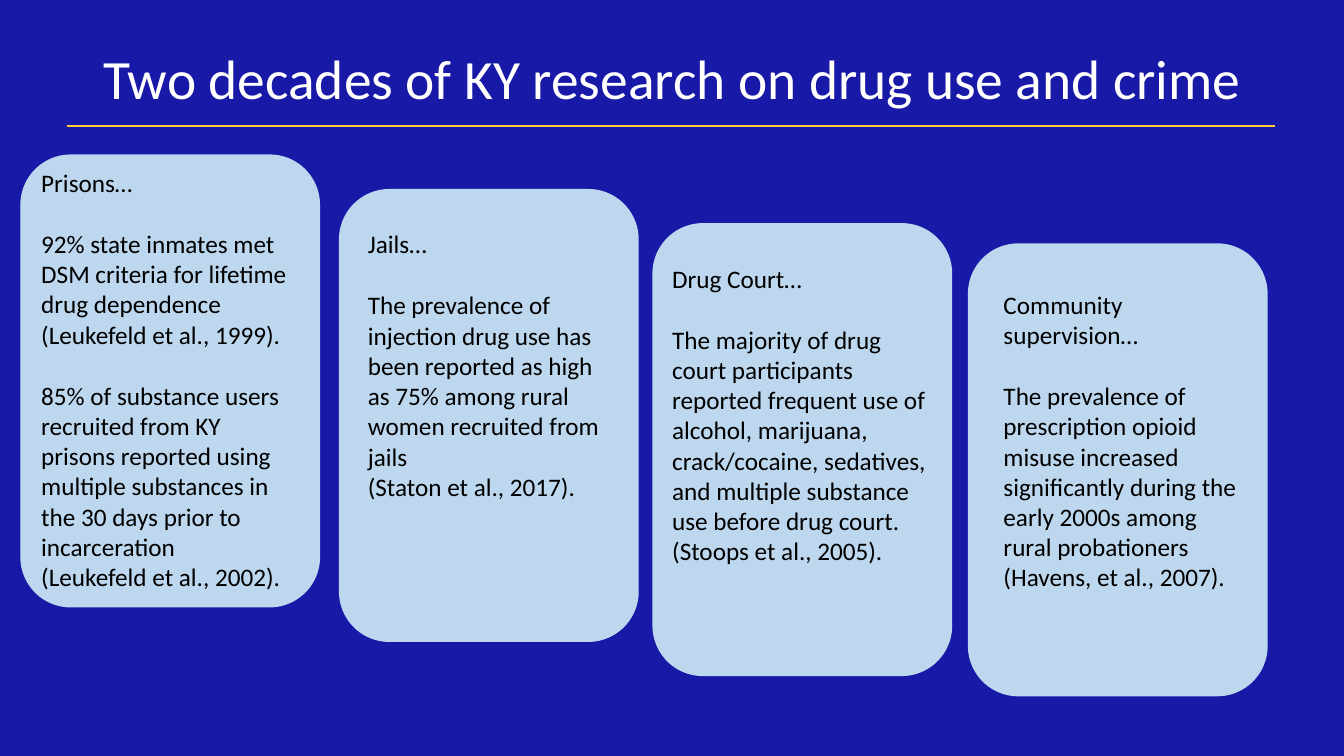
from pptx import Presentation
from pptx.dml.color import RGBColor
from pptx.enum.shapes import MSO_CONNECTOR, MSO_SHAPE
from pptx.enum.text import MSO_ANCHOR, PP_ALIGN
from pptx.util import Cm, Pt
from lxml.etree import SubElement
from pptx.oxml.ns import qn

TITLE = "Two decades of KY research on drug use and crime"
SETTINGS = [
    {"card": (0.53, 3.91), "text": (0.79, 4.09, 7.01, 11.02), "groups": [
        ["Prisons…"],
        ["92% state inmates met DSM criteria for lifetime drug dependence (Leukefeld et al., 1999)."],
        ["85% of substance users recruited from KY prisons reported using multiple substances "
         "in the 30 days prior to incarceration", "(Leukefeld et al., 2002)."]]},
    {"card": (8.56, 4.78), "text": (9.02, 5.64, 6.68, 7.19), "groups": [
        ["Jails…"],
        ["The prevalence of injection drug use has been reported as high as 75% among rural "
         "women recruited from jails", "(Staton et al., 2017)."]]},
    {"card": (16.46, 5.64), "text": (16.69, 6.5, 7.06, 7.95), "groups": [
        ["Drug Court…"],
        ["The majority of drug court participants reported frequent use of alcohol, marijuana, "
         "crack/cocaine, sedatives, and multiple substance use before drug court. "
         "(Stoops et al., 2005)."]]},
    {"card": (24.41, 6.15), "text": (25.04, 7.16, 6.68, 7.95), "groups": [
        ["Community supervision…"],
        ["The prevalence of prescription opioid misuse increased significantly during the early "
         "2000s among rural probationers (Havens, et al., 2007)."]]},
]
COLOURS = {"background": "1919A7", "card": "BDD7EE", "title": "FFFFFF",
           "body": "000000", "rule": "FFCF37"}
CARD_SIZE = (7.52, 11.38)
GROUP_GAP = Pt(22)


def colour(role):
    return RGBColor.from_string(COLOURS[role])


def set_font(paragraph, size, role):
    paragraph.font.name = "Calibri"
    paragraph.font.size = Pt(size)
    paragraph.font.color.rgb = colour(role)


def add_frame(slide, bounds):
    frame = slide.shapes.add_textbox(*map(Cm, bounds)).text_frame
    frame.word_wrap = True
    return frame


def add_card(slide, corner):
    card = slide.shapes.add_shape(MSO_SHAPE.ROUNDED_RECTANGLE, *map(Cm, corner + CARD_SIZE))
    card.shadow.inherit = False
    card.fill.solid()
    card.fill.fore_color.rgb = colour("card")
    card.line.color.rgb = colour("card")
    card.line.width = Pt(1)


def add_findings(slide, bounds, groups):
    frame = add_frame(slide, bounds)
    for group_index, group in enumerate(groups):
        for line_index, line in enumerate(group):
            first = group_index == line_index == 0
            paragraph = frame.paragraphs[0] if first else frame.add_paragraph()
            paragraph.text = line
            if group_index and not line_index:
                paragraph.space_before = GROUP_GAP
            set_font(paragraph, 18, "body")


def add_title(slide):
    frame = add_frame(slide, (2.34, 0.38, 29.21, 3.35))
    frame.vertical_anchor = MSO_ANCHOR.MIDDLE
    title = frame.paragraphs[0]
    title.text = TITLE
    title.alignment = PP_ALIGN.CENTER
    title.line_spacing = 0.9
    set_font(title, 39.6, "title")


def add_rule(slide):
    rule = slide.shapes.add_connector(MSO_CONNECTOR.STRAIGHT, *map(Cm, (1.68, 3.18, 32.13, 3.18)))
    rule.line.color.rgb = colour("rule")
    rule.line.width = Pt(1.25)
    SubElement(rule._element.spPr, qn("a:effectLst"))


def main():
    presentation = Presentation()
    presentation.slide_width = Cm(33.87)
    presentation.slide_height = Cm(19.05)
    slide = presentation.slides.add_slide(presentation.slide_layouts[6])
    slide.background.fill.solid()
    slide.background.fill.fore_color.rgb = colour("background")
    add_title(slide)
    add_rule(slide)
    for setting in SETTINGS:
        add_card(slide, setting["card"])
        add_findings(slide, setting["text"], setting["groups"])
    presentation.save("out.pptx")


if __name__ == "__main__":
    main()
